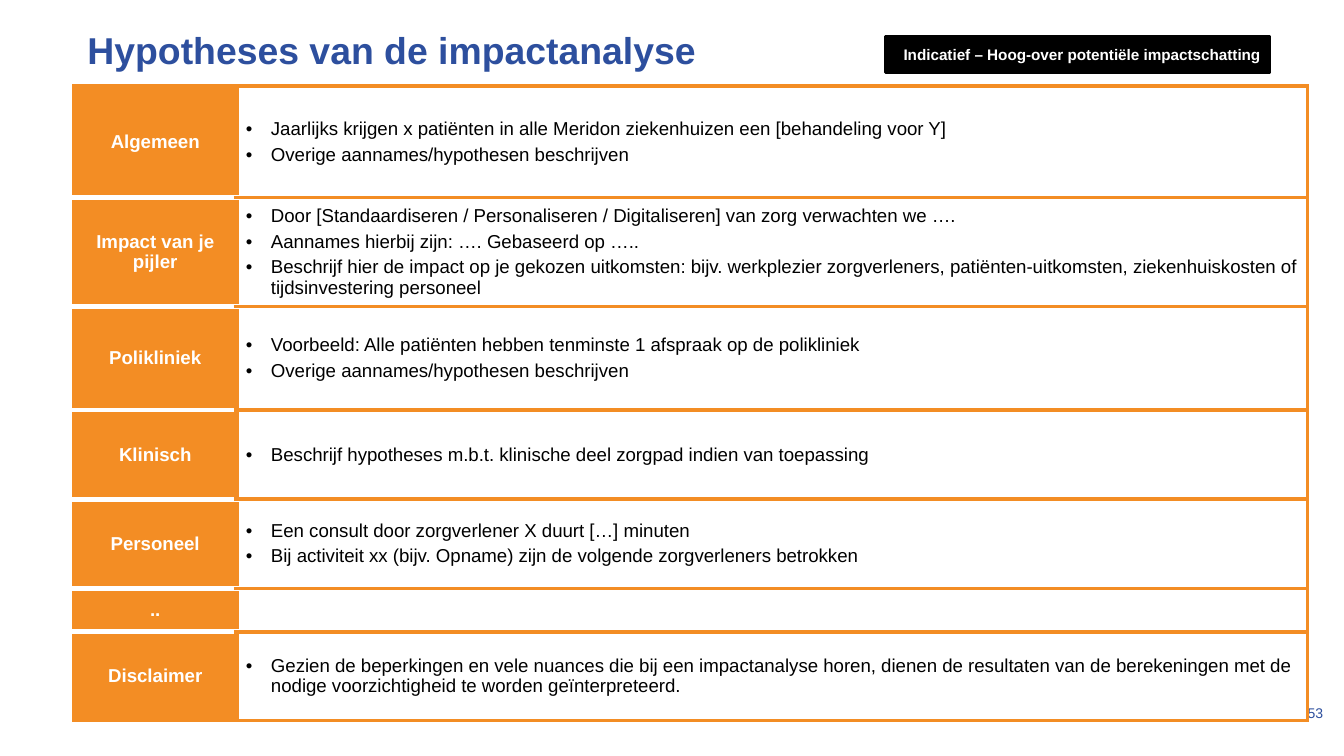
from lxml import etree
from pptx import Presentation
from pptx.dml.color import RGBColor
from pptx.enum.shapes import MSO_SHAPE
from pptx.enum.text import MSO_ANCHOR, MSO_AUTO_SIZE, PP_ALIGN
from pptx.oxml.ns import qn
from pptx.util import Pt

RECT = MSO_SHAPE.RECTANGLE
TOP, MIDDLE = MSO_ANCHOR.TOP, MSO_ANCHOR.MIDDLE
LEFT, CENTER, RIGHT = PP_ALIGN.LEFT, PP_ALIGN.CENTER, PP_ALIGN.RIGHT
FIXED = MSO_AUTO_SIZE.NONE

COLORS = {"blue": "2D4F9E", "orange": "F38D24", "white": "FFFFFF", "black": "000000"}
FONT = "Arial"

TITLE = "Hypotheses van de impactanalyse"
TAG = "Indicatief – Hoog-over potentiële impactschatting"
PAGE = "53"
OTHER = "Overige aannames/hypothesen beschrijven"

# label, row height, bullets
ROWS = [
    ("Algemeen", 59.8, [
        "Jaarlijks krijgen x patiënten in alle Meridon ziekenhuizen een [behandeling voor Y]",
        OTHER]),
    ("Impact van je pijler", 58.4, [
        "Door [Standaardiseren / Personaliseren / Digitaliseren] van zorg verwachten we ….",
        "Aannames hierbij zijn: …. Gebaseerd op …..",
        "Beschrijf hier de impact op je gekozen uitkomsten: bijv. werkplezier zorgverleners, "
        "patiënten-uitkomsten, ziekenhuiskosten of tijdsinvestering personeel"]),
    ("Polikliniek", 55.4, [
        "Voorbeeld: Alle patiënten hebben tenminste 1 afspraak op de polikliniek",
        OTHER]),
    ("Klinisch", 47.8, [
        "Beschrijf hypotheses m.b.t. klinische deel zorgpad indien van toepassing"]),
    ("Personeel", 47.8, [
        "Een consult door zorgverlener X duurt […] minuten",
        "Bij activiteit xx (bijv. Opname) zijn de volgende zorgverleners betrokken"]),
    ("..", 23.2, []),
    ("Disclaimer", 47.5, [
        "Gezien de beperkingen en vele nuances die bij een impactanalyse horen, dienen de "
        "resultaten van de berekeningen met de nodige voorzichtigheid te worden "
        "geïnterpreteerd."]),
]
WIDTHS = (87.1, 573.8)


def rgb(name):
    return RGBColor.from_string(COLORS[name])


def write(para, text, size, color, bold=False, align=LEFT):
    para.alignment = align
    run = para.add_run()
    run.text = text
    font = run.font
    font.name, font.size, font.bold = FONT, Pt(size), bold
    font.color.rgb = rgb(color)


def frame(shape, anchor, side, edge, wrap=True):
    """Set anchor, insets and wrapping; return the first paragraph."""
    body = shape.text_frame
    body.auto_size, body.word_wrap, body.vertical_anchor = FIXED, wrap, anchor
    body.margin_left = body.margin_right = Pt(side)
    body.margin_top = body.margin_bottom = Pt(edge)
    return body.paragraphs[0]


def bullet(para):
    props = para._p.get_or_add_pPr()
    props.set("marL", str(Pt(13.5)))
    props.set("indent", str(-Pt(13.5)))
    tint = etree.SubElement(props, qn("a:buClr"))
    etree.SubElement(tint, qn("a:srgbClr"), val=COLORS["black"])
    etree.SubElement(props, qn("a:buFont"), typeface=FONT)
    etree.SubElement(props, qn("a:buChar"), char="•")


def paint(cell, fill, edges):
    """Fill the cell; edges maps L, R, T, B to (color, width)."""
    props = cell._tc.get_or_add_tcPr()
    for side in "LRTB":
        color, width = edges[side]
        line = etree.SubElement(props, qn("a:ln" + side), w=str(Pt(width)))
        solid = etree.SubElement(line, qn("a:solidFill"))
        etree.SubElement(solid, qn("a:srgbClr"), val=COLORS[color])
    cell.fill.solid()
    cell.fill.fore_color.rgb = rgb(fill)
    cell.vertical_anchor = MIDDLE
    cell.margin_left = cell.margin_right = Pt(5)
    cell.margin_top = cell.margin_bottom = Pt(2.9)


def add_grid(slide):
    heights = [row[1] for row in ROWS]
    shape = slide.shapes.add_table(len(ROWS), 2, Pt(39.6), Pt(46.1),
                                   Pt(sum(WIDTHS)), Pt(sum(heights)))
    table = shape.table
    table.first_row = table.horz_banding = False
    for col, width in zip(table.columns, WIDTHS):
        col.width = Pt(width)
    rim, gap, split = ("orange", 2.25), ("white", 3), ("orange", 3)
    last = len(ROWS) - 1
    for i, (label, height, items) in enumerate(ROWS):
        table.rows[i].height = Pt(height)
        head, body = table.cell(i, 0), table.cell(i, 1)
        paint(head, "orange", {"L": rim, "R": split, "T": gap if i else rim,
                               "B": gap if i < last else rim})
        paint(body, "white", {"L": split, "R": rim, "T": rim, "B": rim})
        write(head.text_frame.paragraphs[0], label, 10, "white", True, CENTER)
        text = body.text_frame
        for j, item in enumerate(items):
            para = text.add_paragraph() if j else text.paragraphs[0]
            if j:
                para.space_before = Pt(2.5)
            bullet(para)
            write(para, item, 10, "black")
        if not items:
            etree.SubElement(text.paragraphs[0]._p, qn("a:endParaRPr"), sz="1000")


def add_tag(slide):
    tag = slide.shapes.add_shape(RECT, Pt(474.5), Pt(19.4), Pt(205.9), Pt(19.4))
    tag.shadow.inherit = False
    tag.fill.solid()
    tag.fill.fore_color.rgb = tag.line.color.rgb = rgb("black")
    tag.line.width = Pt(1.5)
    para = frame(tag, MIDDLE, 5, 5, wrap=False)
    para.line_spacing = 1.06
    write(para, TAG, 8.2, "white", True, RIGHT)


def main():
    deck = Presentation()
    deck.slide_width, deck.slide_height = Pt(720), Pt(405)
    slide = deck.slides.add_slide(deck.slide_layouts[5])

    title = slide.shapes.title
    title.left, title.top, title.width, title.height = Pt(39.6), Pt(7.2), Pt(415.4), Pt(38.9)
    write(frame(title, TOP, 7.2, 7.2), TITLE, 20, "blue", True)

    page = slide.shapes.add_textbox(Pt(693.4), Pt(373.7), Pt(28.1), Pt(16.6))
    write(frame(page, MIDDLE, 7.2, 3.6), PAGE, 7.5, "blue")

    add_grid(slide)
    add_tag(slide)
    deck.save("out.pptx")


if __name__ == "__main__":
    main()
